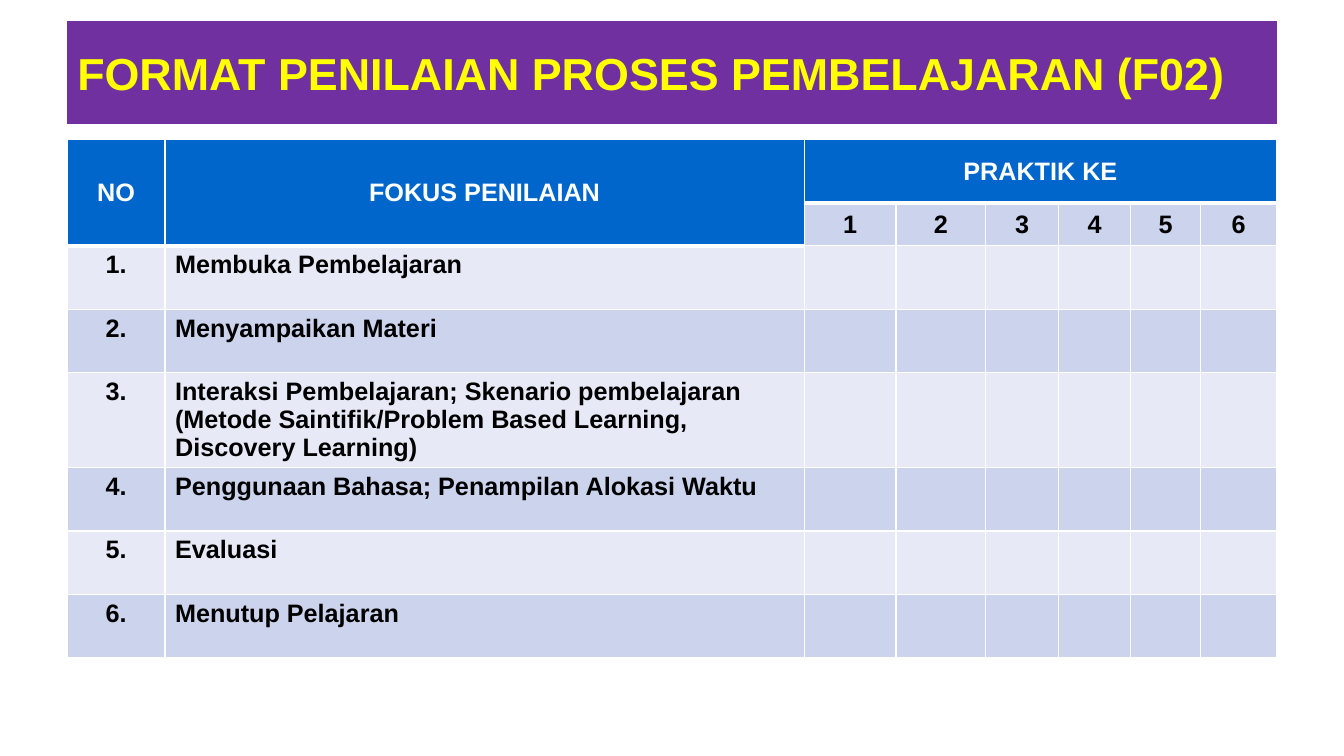
import pptx
import pptx.dml.color
import pptx.enum.text
import pptx.oxml
import pptx.oxml.ns
import pptx.util

COLORS = {
    "banner": "7030A0",
    "title": "FFFF00",
    "header": "0066CC",
    "light": "E7EAF6",
    "dark": "CCD3EC",
    "white": "FFFFFF",
    "black": "000000",
}
ALIGN = pptx.enum.text.PP_ALIGN
ANCHOR = pptx.enum.text.MSO_ANCHOR

COLUMN_SHARES = [7.28, 47.56, 6.83, 6.68, 5.4, 5.4, 5.18, 5.67]
HEADER_SHARES = [8.4, 5.6]
BODY_SHARE = 8.4
FOCUS_ITEMS = [
    "Membuka Pembelajaran",
    "Menyampaikan Materi",
    "Interaksi Pembelajaran; Skenario pembelajaran "
    "(Metode Saintifik/Problem Based Learning, Discovery Learning)",
    "Penggunaan Bahasa; Penampilan Alokasi Waktu",
    "Evaluasi",
    "Menutup Pelajaran",
]


def rgb(name):
    return pptx.dml.color.RGBColor.from_string(COLORS[name])


class SlideBuilder:
    font = "Arial"

    def __init__(self, deck):
        self.deck = deck
        self.page = deck.slides.add_slide(deck.slide_layouts[5])

    def across(self, percent):
        return round(self.deck.slide_width * percent / 100)

    def down(self, percent):
        return round(self.deck.slide_height * percent / 100)

    def set_text(self, frame, text, size, color, align):
        frame.text = text
        para = frame.paragraphs[0]
        para.alignment = align
        for span in para.runs:
            span.font.name = self.font
            span.font.size = pptx.util.Pt(size)
            span.font.bold = True
            span.font.color.rgb = rgb(color)

    def title(self, text, left, top, width, height):
        box = self.page.shapes.title
        box.left, box.top = self.across(left), self.down(top)
        box.width, box.height = self.across(width), self.down(height)
        box.fill.solid()
        box.fill.fore_color.rgb = rgb("banner")
        frame = box.text_frame
        frame.word_wrap = True
        frame.auto_size = pptx.enum.text.MSO_AUTO_SIZE.NONE
        frame.vertical_anchor = ANCHOR.MIDDLE
        self.set_text(frame, text, 32, "title", ALIGN.LEFT)

    def table(self, left, top, columns, rows):
        grid = self.page.shapes.add_table(
            len(rows), len(columns), self.across(left), self.down(top),
            self.across(sum(columns)), self.down(sum(rows))).table
        for column, share in zip(grid.columns, columns):
            column.width = self.across(share)
        for row, share in zip(grid.rows, rows):
            row.height = self.down(share)
        return grid

    def cell(self, cell, fill, bottom=1):
        properties = cell._tc.get_or_add_tcPr()
        namespace = pptx.oxml.ns.nsdecls("a")
        for side, points in (("L", 1), ("R", 1), ("T", 1), ("B", bottom)):
            properties.append(pptx.oxml.parse_xml(
                f'<a:ln{side} {namespace} w="{pptx.util.Pt(points)}"><a:solidFill>'
                f'<a:srgbClr val="{COLORS["white"]}"/></a:solidFill></a:ln{side}>'))
        cell.fill.solid()
        cell.fill.fore_color.rgb = rgb(fill)

    def label(self, cell, text, color="black", align=ALIGN.CENTER, anchor=ANCHOR.TOP):
        cell.vertical_anchor = anchor
        self.set_text(cell.text_frame, text, 18, color, align)


def main():
    deck = pptx.Presentation()
    deck.slide_width = pptx.util.Inches(13.33)
    deck.slide_height = pptx.util.Inches(7.5)
    builder = SlideBuilder(deck)
    builder.title("FORMAT PENILAIAN PROSES PEMBELAJARAN (F02)", 5, 2.8, 90, 13.6)

    rows = HEADER_SHARES + [BODY_SHARE] * len(FOCUS_ITEMS)
    grid = builder.table(5, 18.5, COLUMN_SHARES, rows)
    for row in range(len(rows)):
        for column in range(len(COLUMN_SHARES)):
            is_header = row == 0 or (row == 1 and column < 2)
            fill = "header" if is_header else ("dark" if row % 2 else "light")
            builder.cell(grid.cell(row, column), fill, 3 if is_header else 1)

    headings = [("NO", 0, 1, 0), ("FOKUS PENILAIAN", 1, 1, 1), ("PRAKTIK KE", 2, 0, 7)]
    for text, column, last_row, last_column in headings:
        heading = grid.cell(0, column)
        heading.merge(grid.cell(last_row, last_column))
        builder.label(heading, text, "white", anchor=ANCHOR.MIDDLE)
    for number in range(1, 7):
        builder.label(grid.cell(1, number + 1), str(number), anchor=ANCHOR.MIDDLE)
    for number, item in enumerate(FOCUS_ITEMS, 1):
        builder.label(grid.cell(number + 1, 0), f"{number}.")
        builder.label(grid.cell(number + 1, 1), item, align=ALIGN.LEFT)

    deck.save("out.pptx")


if __name__ == "__main__":
    main()
